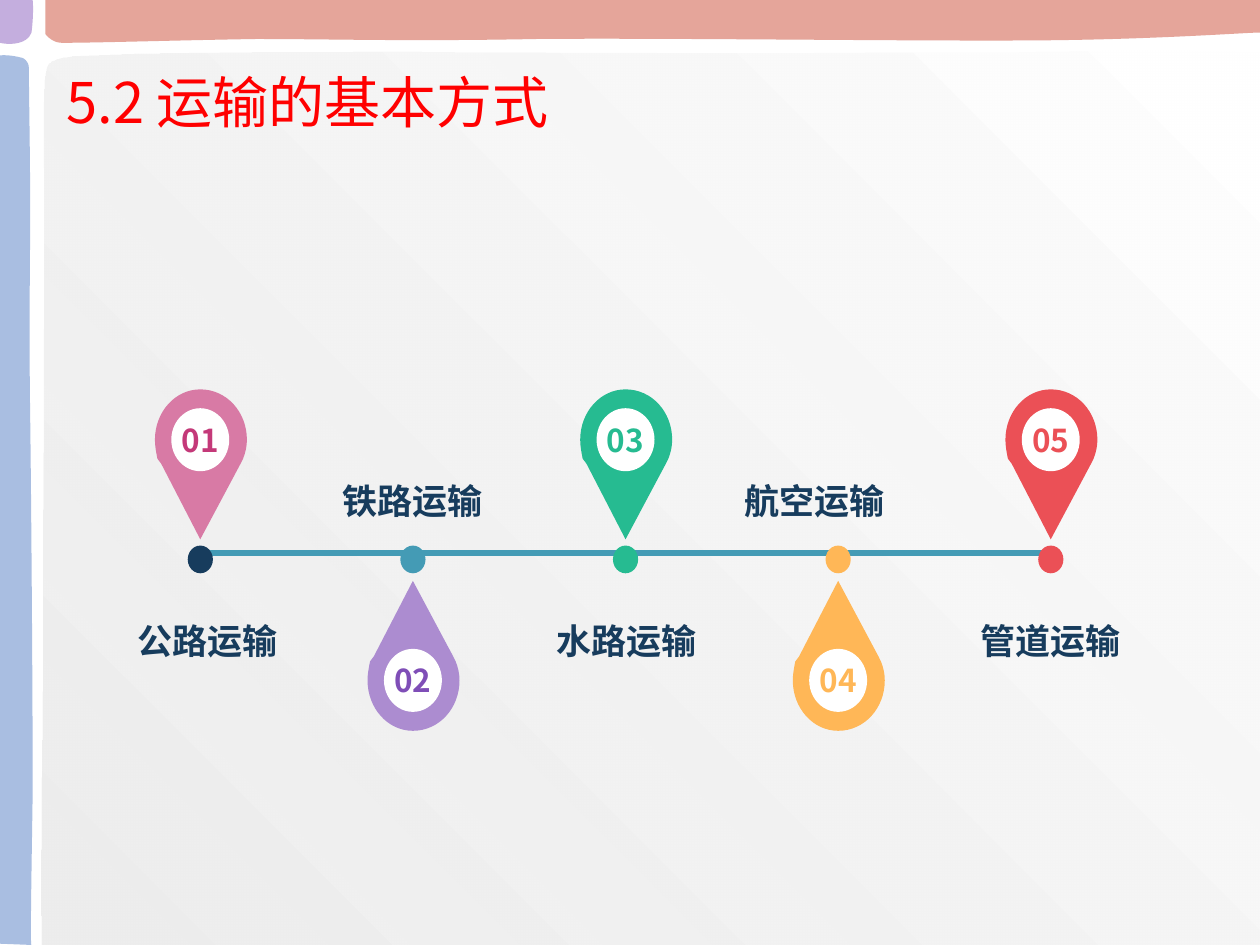
from lxml import etree
from pptx import Presentation
from pptx.dml.color import RGBColor
from pptx.enum import shapes, text
from pptx.oxml import ns
from pptx.util import Inches, Pt

COLORS = {
    "white": "FFFFFF", "grey": "E6E6E6", "coral": "DA7F70", "sky": "85A3D5",
    "lilac": "AC8CD0", "title": "FF0000", "navy": "173C5D", "teal": "449BB5",
    "pink": "D87AA5", "magenta": "C43979", "violet": "7F4EB7",
    "green": "26BB91", "orange": "FFB757", "red": "EB5056",
}
TITLE_FONT = "Noto Sans CJK JP"
BODY_FONT = "Noto Sans CJK SC"

# Outlines in inches: pairs are corners, sextuples are Bezier curves
PANEL = [(10, 7.5), (10, 0.42), (8.86, 0.38, 8.55, 0.42, 7.6, 0.42),
         (6.66, 0.42, 5.5, 0.43, 4.33, 0.42), (3.16, 0.41, 1.23, 0.41, 0.57, 0.45),
         (0.36, 0.48, 0.36, 0.49, 0.35, 0.73), (0.34, 0.96, 0.35, 1.1, 0.35, 1.82),
         (0.35, 2.56, 0.34, 4.12, 0.34, 5.06), (0.34, 6.01, 0.32, 6.62, 0.33, 7.5),
         (5.17, 7.5, 10, 7.5, 10, 7.5)]
TOP_BAND = [(10, 0), (10, 0.26), (10.01, 0.25, 9.28, 0.31, 8.32, 0.32),
            (7.36, 0.33, 5.31, 0.3, 4.26, 0.31), (3.21, 0.33, 2.65, 0.31, 2.03, 0.31),
            (1.4, 0.32, 0.77, 0.34, 0.49, 0.34), (0.41, 0.34, 0.36, 0.27, 0.36, 0.27),
            (0.36, 0.27, 0.36, 0.14, 0.36, 0), (10, 0)]
SIDE_BAND = [(0, 7.49), (0.25, 7.5), (0.24, 7.51, 0.25, 6.98, 0.26, 6.28),
             (0.26, 5.58, 0.25, 4.07, 0.24, 3.3), (0.23, 2.54, 0.24, 2.12, 0.24, 1.67),
             (0.24, 1.21, 0.23, 0.75, 0.23, 0.54), (0.23, 0.48, 0.18, 0.46, 0.18, 0.46),
             (0.07, 0.43, 0, 0.44, 0, 0.44), (0, 7.49)]
CORNER = [(0, 0), (0.26, 0), (0.27, 0.12, 0.25, 0.26, 0.25, 0.26),
          (0.23, 0.31, 0.19, 0.33, 0.15, 0.34), (0.07, 0.36, 0, 0.34, 0, 0.34), (0, 0)]
# Pin outline around the centre of its head, pointing down
PIN = [(0, -0.4), (0.21, -0.4, 0.37, -0.22, 0.37, 0), (0.37, 0.05, 0.36, 0.1, 0.34, 0.15),
       (0.32, 0.19), (0.32, 0.19), (0, 0.79), (-0.31, 0.19), (-0.31, 0.19), (-0.34, 0.15),
       (-0.35, 0.1, -0.36, 0.05, -0.36, 0), (-0.36, -0.22, -0.2, -0.4, 0, -0.4)]

FIRST_X, LAST_X, LINE_Y, DOT_Y = 1.59, 8.34, 4.39, 4.44

# Number, name, pin, number and dot colours, label left and width
STOPS = [
    ("01", "公路运输", "pink", "magenta", "navy", 0.75, 1.8),
    ("02", "铁路运输", "lilac", "violet", "teal", 2.44, 1.67),
    ("03", "水路运输", "green", "green", "green", 3.99, 1.97),
    ("04", "航空运输", "orange", "orange", "orange", 5.81, 1.67),
    ("05", "管道运输", "red", "red", "red", 7.5, 1.67),
]
STEP_X = (LAST_X - FIRST_X) / (len(STOPS) - 1)


def rgb(name):
    return RGBColor.from_string(COLORS[name])


def set_alpha(fill_parent, percent):
    """Make every colour under an element partly transparent."""
    color = next(fill_parent.iter(ns.qn("a:srgbClr")))
    etree.SubElement(color, ns.qn("a:alpha")).set("val", str(percent * 1000))


def style(shape, color, alpha=None):
    shape.shadow.inherit = False
    shape.line.fill.background()
    shape.fill.solid()
    shape.fill.fore_color.rgb = rgb(color)
    if alpha:
        set_alpha(shape._element.spPr, alpha)
    return shape


def bend(shape, outline):
    """Merge the three segments that stand for each curve into one Bezier."""
    segments = iter(list(shape._element.iter(ns.qn("a:moveTo"), ns.qn("a:lnTo"))))
    for part in outline:
        segment = next(segments)
        if len(part) == 6:
            segment.tag = ns.qn("a:cubicBezTo")
            for _ in range(2):
                extra = next(segments)
                segment.append(extra[0])
                extra.getparent().remove(extra)


def add_outline(slide, outline, color, alpha=None, x=0, y=0, flip=1):
    points = [(Inches(x + part[i]), Inches(y + flip * part[i + 1]))
              for part in outline for i in range(0, len(part), 2)]
    builder = slide.shapes.build_freeform(*points[0])
    builder.add_line_segments(points[1:], close=False)
    shape = builder.convert_to_shape()
    bend(shape, outline)
    geometry = next(shape._element.iter(ns.qn("a:path")))
    etree.SubElement(geometry, ns.qn("a:close"))
    return style(shape, color, alpha)


def add_ellipse(slide, x, y, width, height, color):
    ellipse = slide.shapes.add_shape(
        shapes.MSO_SHAPE.OVAL, Inches(x - width / 2), Inches(y - height / 2),
        Inches(width), Inches(height))
    return style(ellipse, color)


def write(paragraph, words, size, color, font=BODY_FONT, bold=False, align=None,
          line_spacing=None):
    """Add one formatted run to a paragraph."""
    if align is not None:
        paragraph.alignment = align
    if line_spacing:
        paragraph.line_spacing = line_spacing
    run = paragraph.add_run()
    run.text = words
    run.font.size, run.font.bold = Pt(size), bold
    run.font.color.rgb = rgb(color)
    run.font.name = font
    etree.SubElement(run._r.get_or_add_rPr(), ns.qn("a:ea")).set("typeface", font)


def add_text_box(slide, x, y, width, height, anchor):
    box = slide.shapes.add_textbox(Inches(x), Inches(y), Inches(width), Inches(height))
    box.text_frame.word_wrap = True
    box.text_frame.vertical_anchor = anchor
    return box.text_frame


def add_frame(slide):
    panel = add_outline(slide, PANEL, "white")
    panel.fill.gradient()
    panel.fill.gradient_angle = 45
    for stop, color in zip(panel.fill.gradient_stops, ("grey", "white")):
        stop.color.rgb = rgb(color)
    set_alpha(panel._element.spPr, 70)
    for outline, color in ((TOP_BAND, "coral"), (SIDE_BAND, "sky"), (CORNER, "lilac")):
        add_outline(slide, outline, color, alpha=70)


def add_title(slide):
    title = add_text_box(slide, 0.43, 0.29, 7.36, 1.03, text.MSO_ANCHOR.MIDDLE)
    write(title.paragraphs[0], "5.2 运输的基本方式", 32, "title", font=TITLE_FONT)


def add_stop(slide, index, number, name, pin_color, number_color, label_x, label_width):
    x = FIRST_X + index * STEP_X
    above = index % 2 == 0
    head_y = 3.49 if above else 5.4
    add_outline(slide, PIN, pin_color, x=x, y=head_y, flip=1 if above else -1)

    # Number in the pin head
    badge = add_ellipse(slide, x, head_y, 0.46, 0.5, "white").text_frame
    badge.margin_left = badge.margin_right = badge.margin_top = badge.margin_bottom = 0
    badge.vertical_anchor = text.MSO_ANCHOR.MIDDLE
    write(badge.paragraphs[0], number, 18, number_color, bold=True,
          align=text.PP_ALIGN.CENTER)

    # Label on the other side of the line
    anchor = text.MSO_ANCHOR.TOP if above else text.MSO_ANCHOR.BOTTOM
    label = add_text_box(slide, label_x, 4.7 if above else 3.59, label_width, 0.6, anchor)
    label.auto_size = text.MSO_AUTO_SIZE.SHAPE_TO_FIT_TEXT
    align = text.PP_ALIGN.LEFT if number == "04" else text.PP_ALIGN.CENTER
    write(label.paragraphs[0], name, 20, "navy", bold=True, align=align, line_spacing=1.5)


def add_timeline(slide):
    for index, (number, name, pin, digits, _, x, width) in enumerate(STOPS):
        add_stop(slide, index, number, name, pin, digits, x, width)
    line = slide.shapes.add_connector(
        shapes.MSO_CONNECTOR.STRAIGHT, Inches(FIRST_X), Inches(LINE_Y),
        Inches(LAST_X), Inches(LINE_Y))
    line.line.color.rgb = rgb("teal")
    line.line.width = Pt(3)
    etree.SubElement(line._element.spPr, ns.qn("a:effectLst"))
    for index, stop in enumerate(STOPS):
        add_ellipse(slide, FIRST_X + index * STEP_X, DOT_Y, 0.2, 0.22, stop[4])


def main():
    presentation = Presentation()
    presentation.slide_width, presentation.slide_height = Inches(10), Inches(7.5)
    slide = presentation.slides.add_slide(presentation.slide_layouts[6])
    add_frame(slide)
    add_title(slide)
    add_timeline(slide)
    presentation.save("out.pptx")


if __name__ == "__main__":
    main()
